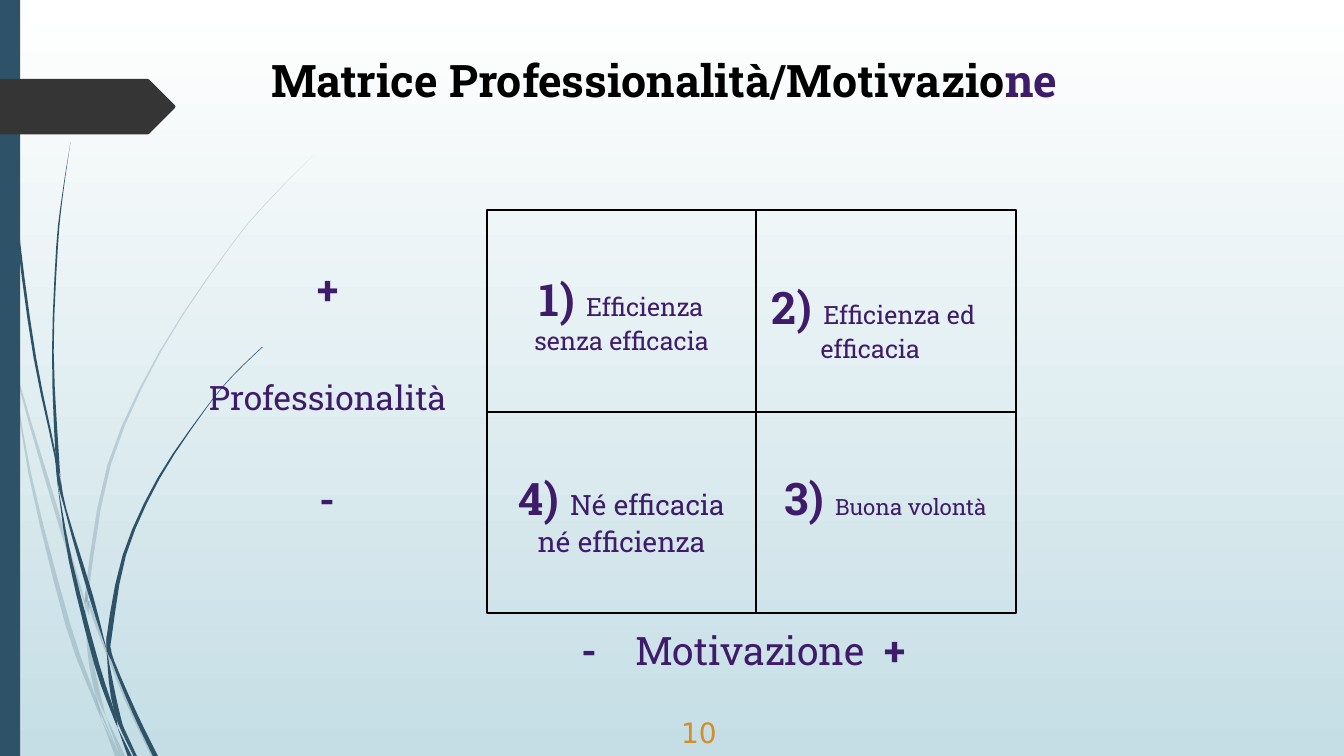
from dataclasses import dataclass

from lxml.etree import SubElement
from pptx import Presentation
from pptx.dml.color import RGBColor as Color
from pptx.enum.shapes import MSO_CONNECTOR as Connector, MSO_SHAPE as Shape
from pptx.enum.text import MSO_ANCHOR as Anchor, MSO_AUTO_SIZE as AutoSize, PP_ALIGN as Align
from pptx.oxml.ns import qn
from pptx.util import Emu, Pt

CELL = 76200
COLUMNS, ROWS = 160, 90


@dataclass(frozen=True)
class Theme:
    font: str = "Roboto Slab"
    number_font: str = "DejaVu Sans"
    purple: Color = Color(0x3F, 0x1C, 0x6A)
    black: Color = Color(0, 0, 0)
    white: Color = Color(0xFF, 0xFF, 0xFF)
    mist: Color = Color(0xC5, 0xDE, 0xE5)
    teal: Color = Color(0x2E, 0x53, 0x69)
    charcoal: Color = Color(0x35, 0x35, 0x35)
    amber: Color = Color(0xD3, 0x8E, 0x27)
    heading: int = 32
    axis_sign: int = 28
    axis_name: int = 24
    large: int = 20
    medium: int = 18
    small: int = 16
    rule: float = 1.5


THEME = Theme()

PALE_BLADES = [
    [(0, 33.8, 0), (0.6, 38.5, 0.5), (1.3, 42, 0)],
    [(1.7, 41.4, 0), (2, 45.1, 0.2), (7, 62.6, 0.5), (10.1, 71.9, 0.1)],
    [(10.6, 71.5, 0), (10.8, 73, 0.4), (14.8, 83.2, 0.4), (18, 90, 0.6)],
    [(12.6, 85.3, 0), (14.3, 90, 0.6)],
    [(1.3, 42, 0), (3.4, 56.4, 0.3), (7.8, 74.4, 0.6), (11, 83, 0.4), (12.1, 85.7, 0)],
    [(10.1, 71.9, 0), (10.4, 77.5, 0.5), (11.2, 82, 0.6), (12.6, 85.3, 0)],
    [(37.4, 18.4, 0), (32.2, 23.6, 0.1), (27.4, 29.3, 0.1), (19, 41.8, 0.2), (12.8, 55.3, 0.4),
     (10.2, 70.1, 0.4), (10.6, 71.5, 0)],
    [(12.1, 85.7, 0), (13.7, 90, 0.6)],
    [(10.2, 70.3, 0), (10.1, 71.9, 0.5), (10.6, 73.2, 0)],
    [(11.2, 82, 0), (11.9, 84.8, 0.2), (14.3, 90, 0)],
]
DARK_BLADES = [
    [(0.4, 0, 0.1), (0.8, 13.2, 0.1), (2, 28, 0.3), (4, 42.6, 0.3), (6.5, 54.4, 0.2), (6.8, 57.7, 0)],
    [(7.2, 56.6, 0), (7.7, 60.6, 0.2), (10.6, 71, 0.5), (12.7, 77.4, 0)],
    [(13.2, 76.9, 0), (13.3, 78.7, 0.3), (15.8, 84.9, 0.5), (18.2, 90, 0.6)],
    [(6.8, 57.2, 0), (8.2, 66.8, 0.4), (11.2, 79, 0.6), (13.3, 84.9, 0.4), (14, 86.6, 0)],
    [(8.4, 16.9, 0), (7.4, 23.2, 0.1), (6.7, 29.4, 0.2), (6.2, 41.9, 0.2), (6.6, 53.9, 0.4), (7.2, 56.6, 0)],
    [(14.6, 86.3, 0), (15.9, 90, 0.4)],
    [(6.6, 53.9, 0), (6.8, 57.2, 0.4), (7.7, 60.6, 0)],
    [(31.2, 41.3, 0.1), (27.6, 44.8, 0.1), (24.4, 48.7, 0.1), (18.7, 57, 0.3), (14.6, 66.1, 0.4),
     (12.7, 75.8, 0.6), (13.2, 76.9, 0)],
    [(14, 86.6, 0), (15.2, 90, 0.5)],
    [(12.7, 77.4, 0), (13.2, 82.9, 0.6), (14.6, 86.3, 0)],
    [(12.7, 75.7, 0), (12.7, 77.4, 0.5), (13.3, 78.7, 0)],
    [(13.2, 82.9, 0), (14, 86, 0.5), (15.9, 90, 0)],
]
ARROW = [(0, 9.4), (17.6, 9.4), (17.8, 9.5), (20.8, 12.5), (20.9, 12.7), (20.8, 12.9), (17.8, 15.9), (17.6, 16), (0, 16)]


def cells(*lengths):
    return [Emu(round(length * CELL)) for length in lengths]


def paint(shape, color, opacity=100):
    shape.shadow.inherit = False
    shape.line.fill.background()
    shape.fill.solid()
    shape.fill.fore_color.rgb = color
    if opacity < 100:
        tint = shape.element.find(".//" + qn("a:srgbClr"))
        SubElement(tint, qn("a:alpha"), val=str(opacity * 1000))


def spline(knots, steps=3):
    padded = [knots[0], *knots, knots[-1]]
    for a, b, c, d in zip(padded, padded[1:], padded[2:], padded[3:]):
        for step in range(steps):
            t = step / steps
            yield tuple(
                (2 * q + (r - p) * t + (2 * p - 5 * q + 4 * r - s) * t**2
                 + (3 * q - p - 3 * r + s) * t**3) / 2
                for p, q, r, s in zip(a, b, c, d))
    yield knots[-1]


def add_outline(slide, points, color, opacity=100):
    corners = [cells(*point) for point in points]
    builder = slide.shapes.build_freeform(*corners[0])
    builder.add_line_segments(corners[1:], close=True)
    paint(builder.convert_to_shape(), color, opacity)


def add_blade(slide, knots, opacity):
    curve = list(spline(knots))
    left_edge = [(x, y) for x, y, width in curve]
    right_edge = [(x + width, y) for x, y, width in reversed(curve)]
    add_outline(slide, left_edge + right_edge, THEME.teal, opacity)


def add_rule(slide, *ends):
    rule = slide.shapes.add_connector(Connector.STRAIGHT, *cells(*ends))
    rule.line.color.rgb = THEME.black
    rule.line.width = Pt(THEME.rule)
    SubElement(rule.element.spPr, qn("a:effectLst"))


def add_run(paragraph, text, size, bold):
    run = paragraph.add_run()
    run.text = text
    run.font.size = Pt(size)
    run.font.bold = bold
    return run


def write(paragraph, runs, color=THEME.purple, font=THEME.font, align=Align.CENTER):
    paragraph.alignment = align
    paragraph.font.name = font
    paragraph.font.color.rgb = color
    for text, size, bold in runs:
        add_run(paragraph, text, size, bold)


def add_label(slide, box):
    frame = slide.shapes.add_textbox(*cells(*box)).text_frame
    frame.word_wrap = True
    frame.auto_size = AutoSize.SHAPE_TO_FIT_TEXT
    return frame


def add_tab_stops(paragraph, *columns):
    stops = SubElement(paragraph._p.get_or_add_pPr(), qn("a:tabLst"))
    for position in cells(*columns):
        SubElement(stops, qn("a:tab"), pos=str(position), algn="l")


def add_backdrop(slide):
    fill = slide.background.fill
    fill.gradient()
    fill.gradient_angle = 270
    for stop, color in zip(fill.gradient_stops, (THEME.white, THEME.mist)):
        stop.color.rgb = color
    for blades, opacity in ((PALE_BLADES, 20), (DARK_BLADES, 100)):
        for knots in blades:
            add_blade(slide, knots, opacity)
    paint(slide.shapes.add_shape(Shape.RECTANGLE, *cells(0, 0, 2.4, ROWS)), THEME.teal)
    add_outline(slide, ARROW, THEME.charcoal)


def add_title(slide):
    title = slide.shapes.title
    title.left, title.top, title.width, title.height = cells(22.8, 5.7, 112.6, 7.7)
    frame = title.text_frame
    frame.word_wrap = True
    frame.auto_size = AutoSize.NONE
    frame.vertical_anchor = Anchor.TOP
    paragraph = frame.paragraphs[0]
    paragraph.alignment = Align.CENTER
    paragraph.font.name = THEME.font
    for text, color in (("Matrice Professionalità/Motivazio", THEME.black), ("ne", THEME.purple)):
        add_run(paragraph, text, THEME.heading, True).font.color.rgb = color


def add_matrix(slide):
    left, middle, right = 58, 90, 121
    top, center, bottom = 25, 49, 73
    frame = slide.shapes.add_shape(Shape.RECTANGLE, *cells(left, top, right - left, bottom - top))
    frame.shadow.inherit = False
    frame.fill.background()
    frame.line.color.rgb = THEME.black
    frame.line.width = Pt(THEME.rule)
    add_rule(slide, left, center, right, center)
    add_rule(slide, middle, top, middle, bottom)
    quadrants = [
        ("1) ", "Efficienza senza efficacia", THEME.medium, (60, 31.75, 28, 11.2)),
        ("2) ", "Efficienza ed efficacia ", THEME.medium, (90, 32.7, 28, 11.2)),
        ("4) ", "Né efficacia né efficienza", THEME.large, (59, 55.4, 30, 11.6)),
        ("3) ", "Buona volontà", THEME.small, (92, 55.4, 26.8, 10.8)),
    ]
    for number, text, size, box in quadrants:
        write(add_label(slide, box).paragraphs[0],
              [(number, THEME.heading, True), (text, size, False)])


def add_axes(slide):
    vertical = add_label(slide, (21, 31, 36, 20))
    write(vertical.paragraphs[0], [("+", THEME.axis_sign, True)])
    name = vertical.add_paragraph()
    name.space_before = Pt(46)
    write(name, [("Professionalità", THEME.axis_name, False)])
    write(add_label(slide, (21, 56, 36, 6.8)).paragraphs[0], [("-", THEME.axis_sign, True)])
    horizontal = add_label(slide, (56.4, 74, 64.2, 6.8))
    horizontal.margin_left = cells(12.8)[0]
    paragraph = horizontal.paragraphs[0]
    add_tab_stops(paragraph, 6.4, 36.1)
    write(paragraph, [("-", THEME.axis_sign, True), ("\tMotivazione\t", THEME.axis_sign, False),
                      ("+", THEME.axis_sign, True)], align=Align.LEFT)


def add_page_number(slide):
    frame = slide.shapes.add_textbox(*cells(61.2, 84.4, 44, 5.6)).text_frame
    frame.word_wrap = True
    frame.vertical_anchor = Anchor.MIDDLE
    write(frame.paragraphs[0], [("10", THEME.large, False)], THEME.amber, THEME.number_font)


def main():
    presentation = Presentation()
    presentation.slide_width, presentation.slide_height = cells(COLUMNS, ROWS)
    slide = presentation.slides.add_slide(presentation.slide_layouts[5])
    for add_part in (add_backdrop, add_page_number, add_matrix, add_axes, add_title):
        add_part(slide)
    presentation.save("out.pptx")


if __name__ == "__main__":
    main()
